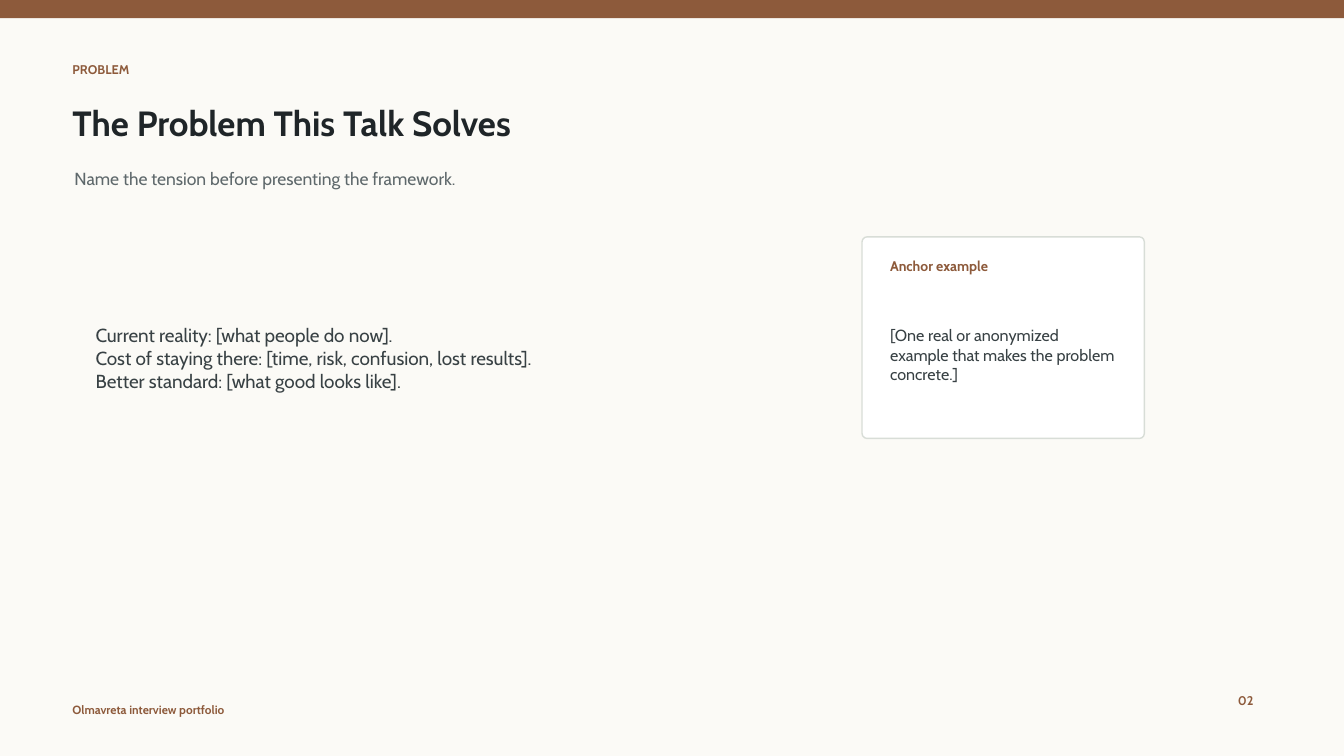
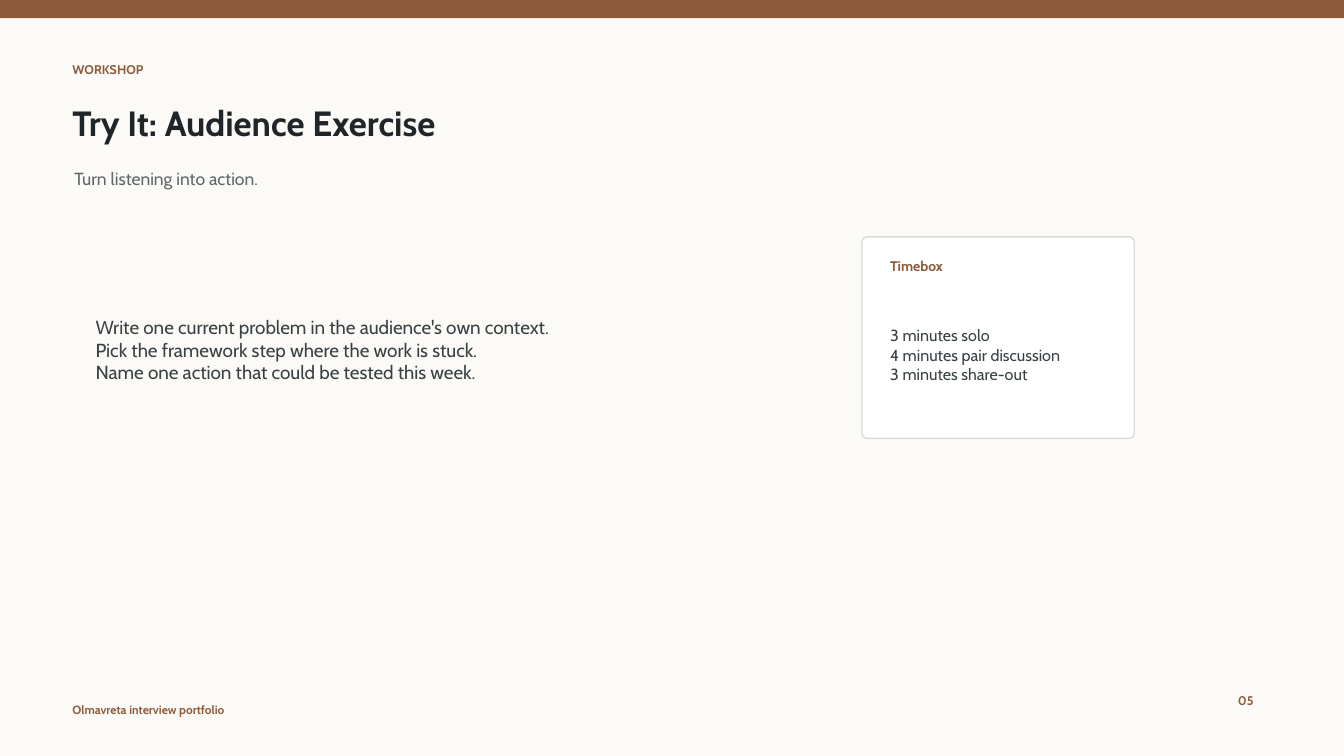
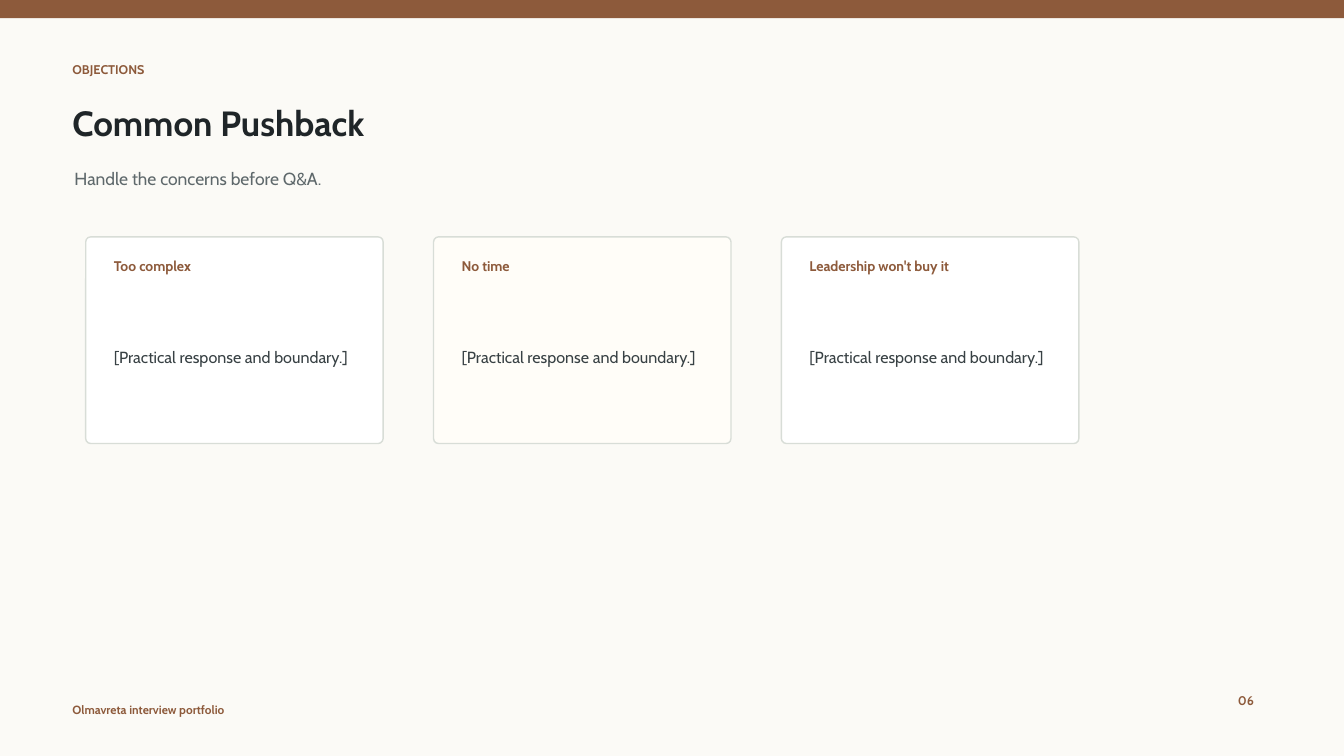
from pptx import Presentation
from pptx.dml.color import RGBColor
from pptx.enum.shapes import MSO_SHAPE as Shape
from pptx.enum.text import MSO_ANCHOR as Anchor
from pptx.util import Inches, Pt

PAPER = RGBColor(0xFB, 0xFA, 0xF6)
BROWN = RGBColor(0x8D, 0x5A, 0x3B)
INK = RGBColor(0x1F, 0x25, 0x28)
SLATE = RGBColor(0x5E, 0x68, 0x6B)
CHARCOAL = RGBColor(0x38, 0x41, 0x44)
WHITE = RGBColor(0xFF, 0xFF, 0xFF)
CREAM = RGBColor(0xFF, 0xFD, 0xF8)
BORDER = RGBColor(0xD8, 0xDD, 0xD7)

FONT = "Cabin"
FOOTER = "Olmavreta interview portfolio"
SLIDE_WIDTH, SLIDE_HEIGHT = 13.33, 7.5
MARGIN = 0.62
CONTENT_LEFT = 0.85
ASIDE_LEFT = 8.55
CARD_TOP = 2.35
CARD_PADDING = 0.18
CARD_RADIUS = 0.05
CARD_GAP = 0.5


def add_text(page, lines, left, top, width, height, size, color, bold=False):
    box = page.shapes.add_textbox(Inches(left), Inches(top), Inches(width), Inches(height))
    frame = box.text_frame
    frame.word_wrap = True
    frame.vertical_anchor = Anchor.MIDDLE
    frame.text = "\n".join(lines)
    for para in frame.paragraphs:
        para.font.name = FONT
        para.font.size = Pt(size)
        para.font.bold = bold
        para.font.color.rgb = color


def add_panel(page, kind, left, top, width, height, fill):
    panel = page.shapes.add_shape(kind, Inches(left), Inches(top), Inches(width), Inches(height))
    panel.shadow.inherit = False
    panel.fill.solid()
    panel.fill.fore_color.rgb = fill
    panel.line.fill.background()
    return panel


def add_card(page, heading, lines, left, width, height, fill=WHITE):
    card = add_panel(page, Shape.ROUNDED_RECTANGLE, left, CARD_TOP, width, height, fill)
    card.adjustments[0] = CARD_RADIUS / height
    card.line.color.rgb = BORDER
    card.line.width = Pt(1)
    text_left, text_width = left + CARD_PADDING, width - 2 * CARD_PADDING
    add_text(page, [heading], text_left, CARD_TOP + 0.16, text_width, 0.25, 10, BROWN, True)
    add_text(page, lines, text_left, CARD_TOP + 0.48, text_width, height - 0.62, 11.5, CHARCOAL)


def add_body(page, lines, top, width, height):
    add_text(page, lines, CONTENT_LEFT, top, width, height, 13.5, CHARCOAL)


def add_page(deck, number, label, title, subtitle):
    page = deck.slides.add_slide(deck.slide_layouts[6])
    page.background.fill.solid()
    page.background.fill.fore_color.rgb = PAPER
    add_panel(page, Shape.RECTANGLE, 0, 0, SLIDE_WIDTH, 0.18, BROWN)
    add_text(page, [FOOTER], MARGIN, 6.94, 3, 0.2, 8.5, BROWN, True)
    add_text(page, [f"{number:02}"], 12.18, 6.82, 0.5, 0.25, 9, BROWN, True)
    add_text(page, [label], MARGIN, 0.58, 4.8, 0.22, 9, BROWN, True)
    add_text(page, [title], MARGIN, 0.94, 9.8, 0.55, 25, INK, True)
    add_text(page, [subtitle], MARGIN + 0.02, 1.56, 10.8, 0.42, 12.5, SLATE)
    return page


def add_problem(deck):
    page = add_page(deck, 2, "PROBLEM", "The Problem This Talk Solves",
                    "Name the tension before presenting the framework.")
    add_body(page, [
        "Current reality: [what people do now].",
        "Cost of staying there: [time, risk, confusion, lost results].",
        "Better standard: [what good looks like].",
    ], 2.2, 7.3, 2.7)
    add_card(page, "Anchor example",
             ["[One real or anonymized example that makes the problem concrete.]"],
             ASIDE_LEFT, 2.8, 2)


def add_workshop(deck):
    page = add_page(deck, 5, "WORKSHOP", "Try It: Audience Exercise",
                    "Turn listening into action.")
    add_body(page, [
        "Write one current problem in the audience's own context.",
        "Pick the framework step where the work is stuck.",
        "Name one action that could be tested this week.",
    ], 2.22, 7.2, 2.5)
    add_card(page, "Timebox",
             ["3 minutes solo", "4 minutes pair discussion", "3 minutes share-out"],
             ASIDE_LEFT, 2.7, 2)


def add_objections(deck):
    page = add_page(deck, 6, "OBJECTIONS", "Common Pushback",
                    "Handle the concerns before Q&A.")
    width = 2.95
    objections = [("Too complex", WHITE), ("No time", CREAM), ("Leadership won't buy it", WHITE)]
    for column, (heading, fill) in enumerate(objections):
        left = CONTENT_LEFT + column * (width + CARD_GAP)
        add_card(page, heading, ["[Practical response and boundary.]"], left, width, 2.05, fill)


def main():
    deck = Presentation()
    deck.slide_width = Inches(SLIDE_WIDTH)
    deck.slide_height = Inches(SLIDE_HEIGHT)
    add_problem(deck)
    add_workshop(deck)
    add_objections(deck)
    deck.save("out.pptx")


if __name__ == "__main__":
    main()
